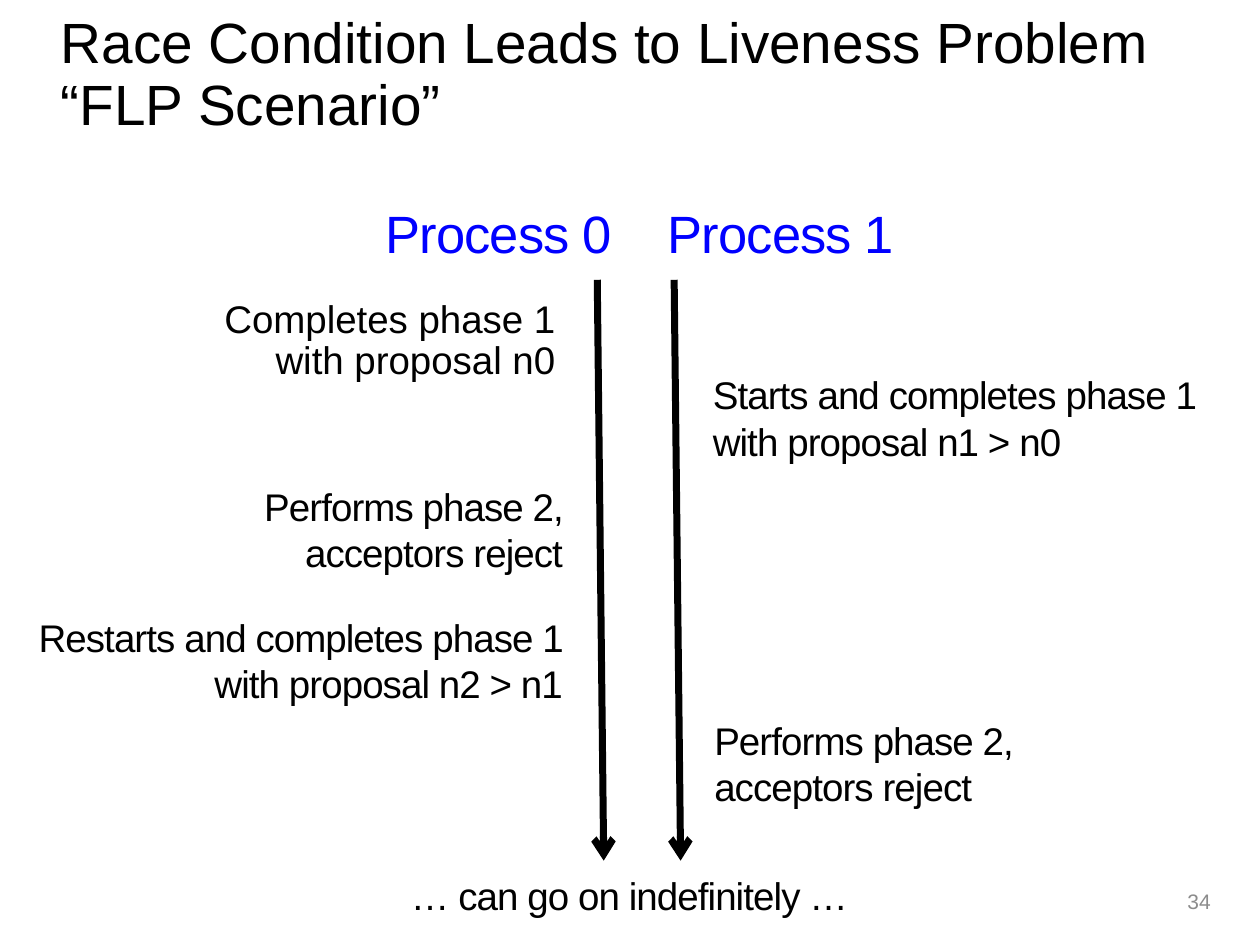
"""Build the slide on the race condition between two proposing processes."""
from copy import deepcopy
from typing import NamedTuple

from lxml import etree
from pptx import Presentation
from pptx.dml.color import RGBColor
from pptx.enum import shapes, text
from pptx.oxml import ns
from pptx.util import Cm, Pt

BLACK = RGBColor(0x00, 0x00, 0x00)
BLUE = RGBColor(0x00, 0x00, 0xFF)
GRAY = RGBColor(0x8C, 0x8C, 0x8C)
LEFT, CENTER, RIGHT = text.PP_ALIGN.LEFT, text.PP_ALIGN.CENTER, text.PP_ALIGN.RIGHT
MIDDLE, TOP = text.MSO_ANCHOR.MIDDLE, text.MSO_ANCHOR.TOP


class Box(NamedTuple):
    left: float
    top: float
    width: float
    height: float


class Label(NamedTuple):
    wording: str
    box: Box
    align: text.PP_ALIGN = LEFT
    size: float = 22
    color: RGBColor = BLACK


class Timeline(NamedTuple):
    x: float
    top: float = 5.64
    bottom: float = 17.35
    drift: float = 0.13


LABELS = [
    Label("Starts and completes phase 1 with proposal n1 > n0", Box(14.27, 7.39, 10.06, 3.3)),
    Label("Performs phase 2, acceptors reject", Box(3.91, 9.63, 7.54, 2.36), RIGHT),
    Label("Restarts and completes phase 1 with proposal n2 > n1", Box(0.6, 12.27, 10.85, 2.62), RIGHT),
    Label("Process 0", Box(6.45, 3.96, 7.21, 1.63), CENTER, 30, BLUE),
    Label("Process 1", Box(12.14, 3.96, 7.21, 1.63), CENTER, 30, BLUE),
    Label("Performs phase 2, acceptors reject", Box(14.3, 14.35, 8.59, 2.39)),
    Label("… can go on indefinitely …", Box(7.24, 17.48, 10.9, 1.14), CENTER),
]
TIMELINES = [Timeline(12.04), Timeline(13.59)]


def write(shape, wording: str, *, size: float, color: RGBColor = BLACK, align=LEFT,
          anchor=TOP, line_spacing: float = 1.0, tracking: int = 0) -> None:
    """Put one formatted paragraph into a shape."""
    frame = shape.text_frame
    frame.word_wrap = True
    frame.auto_size = text.MSO_AUTO_SIZE.NONE
    frame.vertical_anchor = anchor
    paragraph = frame.paragraphs[0]
    paragraph.text = wording
    paragraph.alignment = align
    paragraph.line_spacing = line_spacing
    paragraph.space_before = Pt(0)
    for run in paragraph.runs:
        run.font.name = "Arial"
        run.font.size = Pt(size)
        run.font.color.rgb = color
        if tracking:
            run.font._element.set("spc", str(tracking))
    for line_break in paragraph._p.findall(ns.qn("a:br")):
        line_break.append(deepcopy(paragraph.runs[0].font._element))


def place(shape, box: Box) -> None:
    """Move and size a placeholder."""
    shape.left, shape.top, shape.width, shape.height = map(Cm, box)


def remove_bullet(shape) -> None:
    """Clear the bullet and its indent from the first paragraph."""
    properties = shape.text_frame.paragraphs[0]._p.get_or_add_pPr()
    properties.set("marL", "0")
    properties.set("indent", "0")
    etree.SubElement(properties, ns.qn("a:buNone"))


def draw_label(slide, label: Label) -> None:
    """Add a condensed text label with narrow margins."""
    shape = slide.shapes.add_textbox(*map(Cm, label.box))
    frame = shape.text_frame
    frame.margin_left = frame.margin_right = frame.margin_top = frame.margin_bottom = Cm(0.1)
    write(shape, label.wording, size=label.size, color=label.color,
          align=label.align, tracking=-50)


def draw_timeline(slide, timeline: Timeline) -> None:
    """Add a downward process arrow."""
    arrow = slide.shapes.add_connector(
        shapes.MSO_CONNECTOR.STRAIGHT, Cm(timeline.x), Cm(timeline.top),
        Cm(timeline.x + timeline.drift), Cm(timeline.bottom))
    arrow.line.color.rgb = BLACK
    arrow.line.width = Pt(4)
    etree.SubElement(arrow.line._get_or_add_ln(), ns.qn("a:tailEnd"), type="arrow")
    etree.SubElement(arrow._element.spPr, ns.qn("a:effectLst"))


def main() -> None:
    """Assemble and save the slide."""
    deck = Presentation()
    deck.slide_width, deck.slide_height = Cm(25.4), Cm(19.05)
    slide = deck.slides.add_slide(deck.slide_layouts[1])

    heading = slide.shapes.title
    place(heading, Box(0.97, 0.05, 24.43, 2.97))
    write(heading, "Race Condition Leads to Liveness Problem\v“FLP Scenario”",
          size=32.4, anchor=MIDDLE, line_spacing=0.9)

    first_step = slide.placeholders[1]
    place(first_step, Box(4.24, 5.92, 7.21, 3.35))
    write(first_step, "Completes phase 1 with proposal n0", size=22, align=RIGHT, line_spacing=0.9)
    remove_bullet(first_step)

    page_number = slide.shapes.add_textbox(*map(Cm, Box(18.95, 17.65, 5.71, 1.02)))
    write(page_number, "34", size=12, color=GRAY, align=RIGHT, anchor=MIDDLE)

    for timeline in TIMELINES:
        draw_timeline(slide, timeline)
    for label in LABELS:
        draw_label(slide, label)
    deck.save("out.pptx")


if __name__ == "__main__":
    main()
